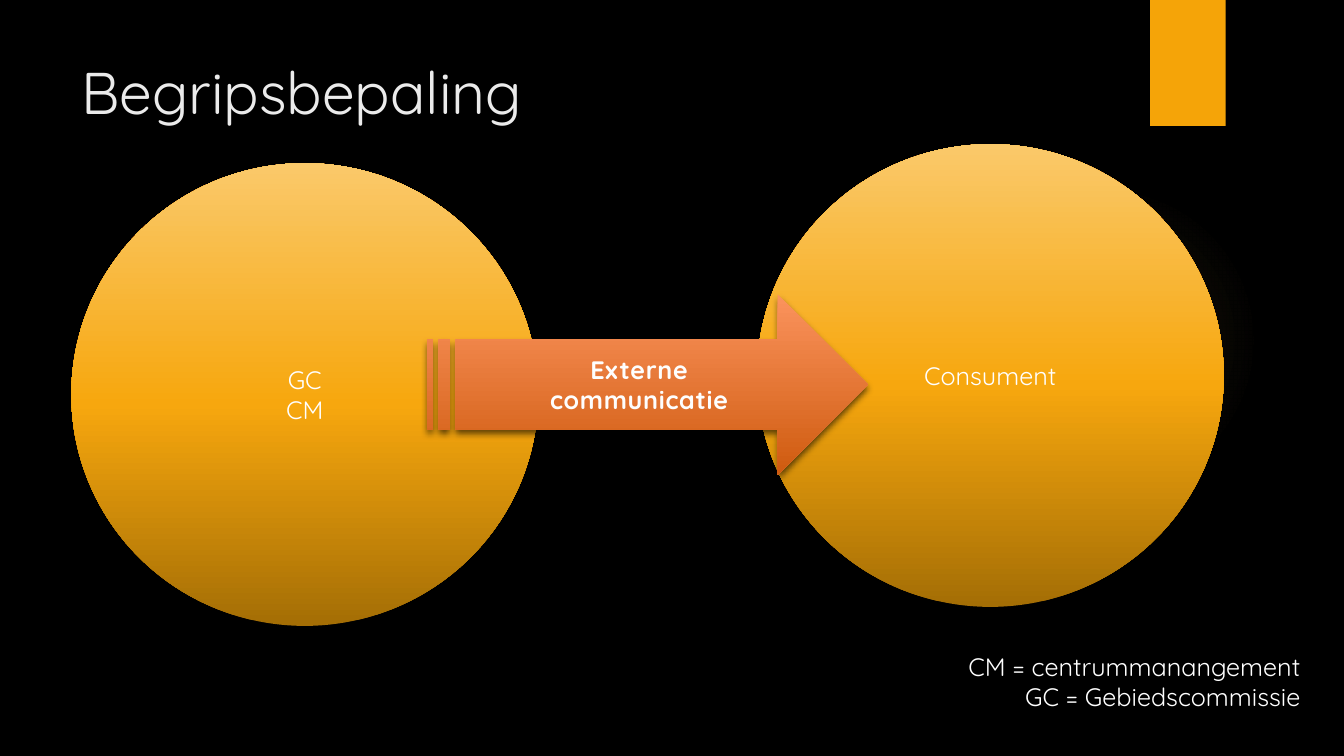
from dataclasses import dataclass
from typing import Any, Optional

import lxml.etree
import pptx
import pptx.dml.color
import pptx.enum.shapes
import pptx.enum.text
import pptx.oxml.ns
import pptx.util

Pt = pptx.util.Pt
RGBColor = pptx.dml.color.RGBColor
Preset = pptx.enum.shapes.MSO_SHAPE
Align = pptx.enum.text.PP_ALIGN
Anchor = pptx.enum.text.MSO_ANCHOR
qn = pptx.oxml.ns.qn

BLACK = RGBColor(0x00, 0x00, 0x00)
WHITE = RGBColor(0xFF, 0xFF, 0xFF)
OFF_WHITE = RGBColor(0xFE, 0xFE, 0xFE)
TITLE_GREY = RGBColor(0xEB, 0xEB, 0xEB)
AMBER = RGBColor(0xF5, 0xA4, 0x08)
AMBER_DARK = RGBColor(0xA4, 0x6E, 0x05)
AMBER_MID = RGBColor(0xF7, 0xA7, 0x0E)
AMBER_LIGHT = RGBColor(0xFA, 0xC9, 0x6A)
ORANGE_LIGHT = RGBColor(0xFB, 0x93, 0x5D)
ORANGE_DARK = RGBColor(0xCF, 0x5B, 0x0F)

BODY = {"name": "Quicksand", "size": Pt(18), "bold": False}


@dataclass(frozen=True)
class Stop:
    percent: int
    color: RGBColor
    opacity: int = 100


@dataclass(frozen=True)
class Gradient:
    stops: tuple[Stop, ...]
    angle: Optional[int] = None


@dataclass(frozen=True)
class Shadow:
    opacity: int
    blur: int
    distance: int


@dataclass(frozen=True)
class Figure:
    preset: Any
    bounds: tuple[float, float, float, float]
    fill: Any
    lines: tuple[str, ...] = ()
    shadow: Optional[Shadow] = None
    emphasis: bool = False


CIRCLE_FILL = Gradient((Stop(0, AMBER_DARK), Stop(48, AMBER_MID), Stop(100, AMBER_LIGHT)), 270)
ARROW_FILL = Gradient((Stop(0, ORANGE_LIGHT), Stop(100, ORANGE_DARK)), 90)
GLOW_FILL = Gradient((Stop(0, AMBER_LIGHT, 7), Stop(36, AMBER_LIGHT, 6), Stop(69, AMBER_LIGHT, 0)))

FIGURES = (
    Figure(Preset.OVAL, (677.5, 131.8, 221.8, 221.8), GLOW_FILL),
    Figure(Preset.RECTANGLE, (821.5, 0, 54, 90), AMBER, shadow=Shadow(45, 3, 2)),
    Figure(Preset.OVAL, (540.7, 103, 333.4, 330.5), CIRCLE_FILL, ("Consument",)),
    Figure(Preset.OVAL, (51, 116.6, 333.4, 330.5), CIRCLE_FILL, ("GC", "CM")),
    Figure(Preset.STRIPED_RIGHT_ARROW, (305.3, 210.2, 314.6, 128.9), ARROW_FILL,
           ("Externe", "communicatie"), Shadow(60, 5, 3), True),
)


def add_child(parent: Any, tag: str, **attributes: Any) -> Any:
    values = {key: str(value) for key, value in attributes.items()}
    return lxml.etree.SubElement(parent, qn(tag), values)


def add_color(parent: Any, color: RGBColor, opacity: int = 100) -> None:
    element = add_child(parent, "a:srgbClr", val=color)
    if opacity < 100:
        add_child(element, "a:alpha", val=opacity * 1000)


def apply_gradient(shape: Any, gradient: Gradient) -> None:
    shape.fill.gradient()
    element = shape.element.spPr.find(qn("a:gradFill"))
    for child in list(element):
        element.remove(child)
    stop_list = add_child(element, "a:gsLst")
    for stop in gradient.stops:
        add_color(add_child(stop_list, "a:gs", pos=stop.percent * 1000), stop.color, stop.opacity)
    if gradient.angle is None:
        radial = add_child(element, "a:path", path="circle")
        add_child(radial, "a:fillToRect", l=50000, t=50000, r=50000, b=50000)
    else:
        add_child(element, "a:lin", ang=gradient.angle * 60000, scaled=0)


def apply_shadow(shape: Any, shadow: Shadow) -> None:
    effects = shape.element.spPr.find(qn("a:effectLst"))
    outer = add_child(effects, "a:outerShdw", blurRad=Pt(shadow.blur), dist=Pt(shadow.distance),
                      dir=90 * 60000, algn="ctr", rotWithShape=0)
    add_color(outer, BLACK, shadow.opacity)


def emphasize(span: Any) -> None:
    properties = span.font._element
    properties.set("spc", "50")
    outline = add_child(properties, "a:ln", w=Pt(0.75))
    add_color(add_child(outline, "a:solidFill"), AMBER)


def write_lines(frame: Any, lines: tuple[str, ...], alignment: Any, color: RGBColor,
                font: dict[str, Any], emphasis: bool = False) -> None:
    for index, line in enumerate(lines):
        para = frame.add_paragraph() if index else frame.paragraphs[0]
        para.alignment = alignment
        span = para.add_run()
        span.text = line
        if emphasis:
            emphasize(span)
        for name, value in font.items():
            setattr(span.font, name, value)
        span.font.color.rgb = color


def draw_figure(page: Any, figure: Figure) -> None:
    shape = page.shapes.add_shape(figure.preset, *map(Pt, figure.bounds))
    if isinstance(figure.fill, Gradient):
        apply_gradient(shape, figure.fill)
    else:
        shape.fill.solid()
        shape.fill.fore_color.rgb = figure.fill
    shape.line.fill.background()
    shape.shadow.inherit = False
    if figure.shadow:
        apply_shadow(shape, figure.shadow)
    if figure.lines:
        frame = shape.text_frame
        frame.word_wrap = True
        frame.vertical_anchor = Anchor.MIDDLE
        color = OFF_WHITE if figure.emphasis else WHITE
        font = BODY | {"bold": figure.emphasis}
        write_lines(frame, figure.lines, Align.CENTER, color, font, figure.emphasis)


def draw_title(page: Any) -> None:
    title = page.shapes.title
    bounds = {"left": Pt(51), "top": Pt(36), "width": Pt(741), "height": Pt(110)}
    for name, value in bounds.items():
        setattr(title, name, value)
    title.text_frame.vertical_anchor = Anchor.TOP
    write_lines(title.text_frame, ("Begripsbepaling",), Align.LEFT, TITLE_GREY,
                BODY | {"size": Pt(42)})


def draw_legend(page: Any) -> None:
    box = page.shapes.add_textbox(Pt(660.2), Pt(461.5), Pt(275.8), Pt(51))
    box.text_frame.word_wrap = False
    box.text_frame.auto_size = pptx.enum.text.MSO_AUTO_SIZE.SHAPE_TO_FIT_TEXT
    write_lines(box.text_frame, ("CM = centrummanangement", "GC = Gebiedscommissie"),
                Align.RIGHT, WHITE, BODY)


def main() -> None:
    deck = pptx.Presentation()
    deck.slide_width, deck.slide_height = Pt(960), Pt(540)
    page = deck.slides.add_slide(deck.slide_layouts[5])
    page.background.fill.solid()
    page.background.fill.fore_color.rgb = BLACK
    draw_title(page)
    for figure in FIGURES:
        draw_figure(page, figure)
    draw_legend(page)
    deck.save("out.pptx")


if __name__ == "__main__":
    main()
